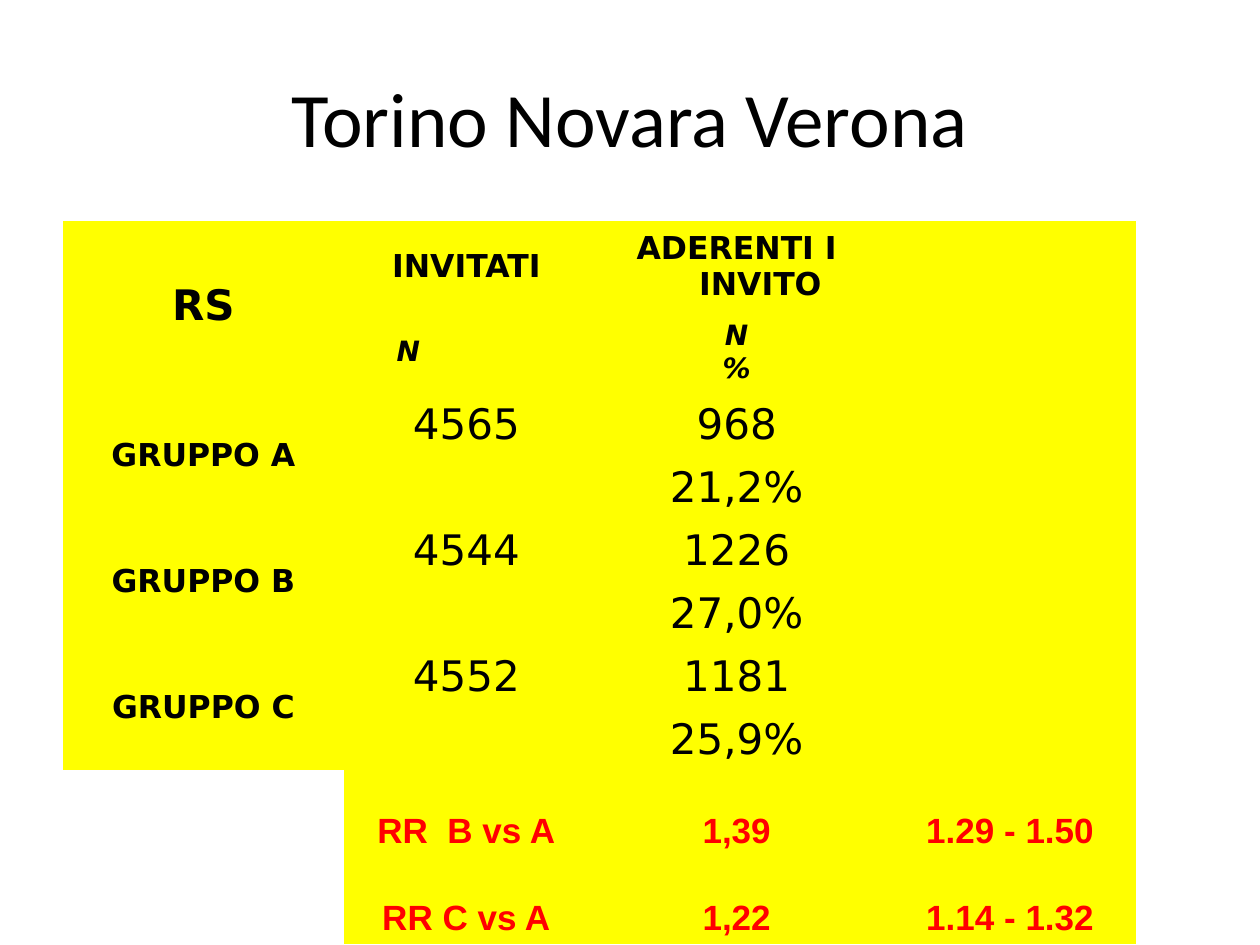
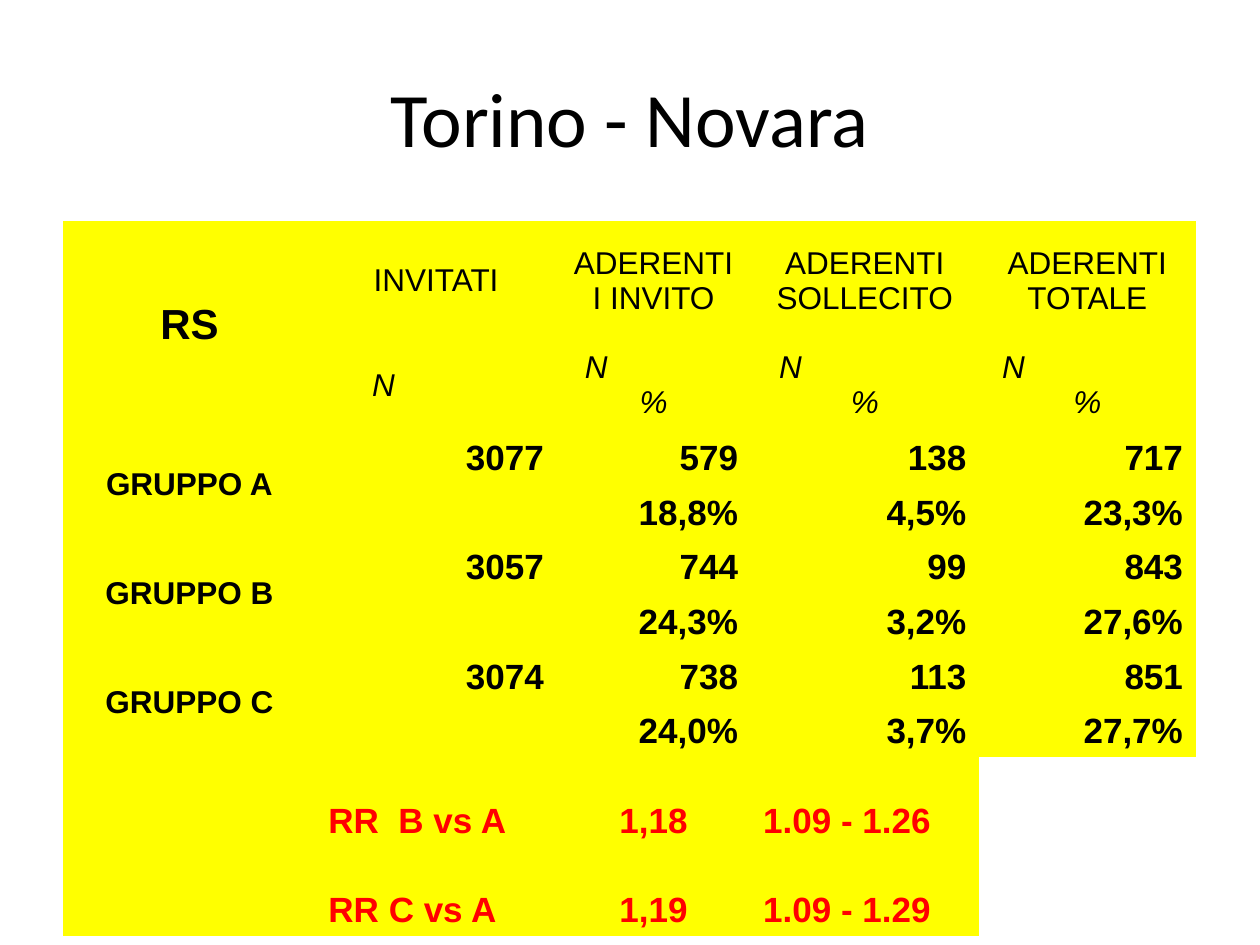
from dataclasses import dataclass, replace

from pptx import Presentation
from pptx.dml.color import RGBColor
from pptx.enum.text import MSO_ANCHOR as Anchor, PP_ALIGN as Align
from pptx.oxml.ns import qn
from pptx.util import Pt

BLACK = RGBColor(0x00, 0x00, 0x00)
RED = RGBColor(0xFF, 0x00, 0x00)
YELLOW = RGBColor(0xFF, 0xFF, 0x00)
PLAIN_TABLE_STYLE = "{2D5ABB26-0587-4C30-8999-92F81FD0307C}"
LEFT, TITLE_TOP, TABLE_TOP = 36, 21.6, 126
TITLE_WIDTH, TITLE_HEIGHT = 648, 90


@dataclass(frozen=True)
class TextStyle:
    font: str
    size: float
    bold: bool = False
    italic: bool = False
    color: RGBColor = BLACK
    align: Align = Align.CENTER
    anchor: Anchor = Anchor.MIDDLE
    hanging: float = 0


TITLE_STYLE = TextStyle("Calibri", 44)
CORNER = "RS"
RATIO_FIRST_COLUMN = 1
RATIO_STYLE = TextStyle("Arial", 20, bold=True, color=RED, anchor=Anchor.BOTTOM)

# "unit_indents": left indent of the N in each column, None where it is centred.
# "groups": label, number invited, then (count, share) for each invitation round.
HANGING = TextStyle("DejaVu Sans", 18, bold=True, hanging=27)
ARIAL = TextStyle("Arial", 18)
STUDIES = [
    {
        "title": "Torino Novara Verona",
        "columns": [160.5, 140, 169, 143.5],
        "rows": [52.5, 33] + [23.75] * 6 + [49.7] * 2,
        "height": 413,
        "headings": ["INVITATI", "ADERENTI I INVITO"],
        "unit_indents": [23, None],
        "groups": [
            ("GRUPPO A", "4565", [("968", "21,2%")]),
            ("GRUPPO B", "4544", [("1226", "27,0%")]),
            ("GRUPPO C", "4552", [("1181", "25,9%")]),
        ],
        "ratios": [("RR  B vs A", "1,39", "1.29 - 1.50"),
                   ("RR C vs A", "1,22", "1.14 - 1.32")],
        "ratio_aligns": [Align.CENTER] * 3,
        "unfilled_column": 0,
        "heading": HANGING,
        "unit": replace(HANGING, size=16, italic=True),
        "label": HANGING,
        "value": replace(HANGING, size=24, bold=False, anchor=Anchor.BOTTOM),
        "ratio": replace(RATIO_STYLE, hanging=27),
    },
    {
        "title": "Torino - Novara",
        "columns": [144.5, 137.5, 111, 130.5, 123.8],
        "rows": [69, 39] + [24.5] * 6 + [51.1] * 2,
        "height": 409,
        "headings": ["INVITATI", "ADERENTI I INVITO", "ADERENTI SOLLECITO",
                     "ADERENTI TOTALE"],
        "unit_indents": [25, 9, 9, 6],
        "groups": [
            ("GRUPPO A", "3077",
             [("579", "18,8%"), ("138", "4,5%"), ("717", "23,3%")]),
            ("GRUPPO B", "3057",
             [("744", "24,3%"), ("99", "3,2%"), ("843", "27,6%")]),
            ("GRUPPO C", "3074",
             [("738", "24,0%"), ("113", "3,7%"), ("851", "27,7%")]),
        ],
        "ratios": [("RR  B vs A", "1,18", "1.09 - 1.26"),
                   ("RR C vs A", "1,19", "1.09 - 1.29")],
        "ratio_aligns": [Align.LEFT, Align.CENTER, Align.LEFT],
        "unfilled_column": 4,
        "heading": ARIAL,
        "unit": replace(ARIAL, italic=True),
        "label": replace(ARIAL, bold=True),
        "value": replace(ARIAL, size=20, bold=True, align=Align.RIGHT,
                         anchor=Anchor.BOTTOM),
        "ratio": RATIO_STYLE,
    },
]


def set_indent(paragraph, left, first_line):
    properties = paragraph._p.get_or_add_pPr()
    properties.set("marL", str(Pt(left)))
    properties.set("indent", str(Pt(first_line)))


def format_paragraph(paragraph, style):
    paragraph.alignment = style.align
    if style.hanging:
        set_indent(paragraph, style.hanging, -style.hanging)
    for run in paragraph.runs:
        run.font.name = style.font
        run.font.size = Pt(style.size)
        run.font.bold = style.bold
        run.font.italic = style.italic
        run.font.color.rgb = style.color


def write_cell(cell, text, style):
    cell.text_frame.text = text
    cell.vertical_anchor = style.anchor
    for paragraph in cell.text_frame.paragraphs:
        format_paragraph(paragraph, style)


def add_title(slide, text):
    box = slide.shapes.add_textbox(Pt(LEFT), Pt(TITLE_TOP),
                                   Pt(TITLE_WIDTH), Pt(TITLE_HEIGHT))
    frame = box.text_frame
    frame.word_wrap = True
    frame.vertical_anchor = TITLE_STYLE.anchor
    frame.text = text
    format_paragraph(frame.paragraphs[0], TITLE_STYLE)


def add_plain_table(slide, study):
    """Add the empty grid, yellow except beside the ratio rows."""
    columns, rows = study["columns"], study["rows"]
    shape = slide.shapes.add_table(len(rows), len(columns), Pt(LEFT), Pt(TABLE_TOP),
                                   Pt(sum(columns)), Pt(study["height"]))
    shape.element.find(".//" + qn("a:tableStyleId")).text = PLAIN_TABLE_STYLE
    table = shape.table
    table.first_row = table.horz_banding = False
    for column, width in zip(table.columns, columns):
        column.width = Pt(width)
    for row, height in zip(table.rows, rows):
        row.height = Pt(height)
    shape.height = Pt(study["height"])

    first_ratio_row = len(rows) - len(study["ratios"])
    for row in range(len(rows)):
        for column in range(len(columns)):
            fill = table.cell(row, column).fill
            if row >= first_ratio_row and column == study["unfilled_column"]:
                fill.background()
            else:
                fill.solid()
                fill.fore_color.rgb = YELLOW
    return table


def write_row_label(table, row, text, style):
    """Write a label that spans two rows of the first column."""
    cell = table.cell(row, 0)
    cell.merge(table.cell(row + 1, 0))
    write_cell(cell, text, style)


def write_headings(table, study):
    write_row_label(table, 0, CORNER, replace(study["label"], size=24))
    for column, heading in enumerate(study["headings"], 1):
        write_cell(table.cell(0, column), heading, study["heading"])
    for column, indent in enumerate(study["unit_indents"], 1):
        cell = table.cell(1, column)
        write_cell(cell, "N" if column == 1 else "N\n%", study["unit"])
        if indent is not None:
            count = cell.text_frame.paragraphs[0]
            count.alignment = Align.LEFT
            set_indent(count, indent, 0)


def write_groups(table, study):
    for index, (label, invited, rounds) in enumerate(study["groups"]):
        row = 2 + 2 * index
        write_row_label(table, row, label, study["label"])
        write_cell(table.cell(row, 1), invited, study["value"])
        for column, results in enumerate(rounds, 2):
            for offset, value in enumerate(results):
                write_cell(table.cell(row + offset, column), value, study["value"])


def write_ratios(table, study):
    first_row = len(study["rows"]) - len(study["ratios"])
    for row, ratio in enumerate(study["ratios"], first_row):
        aligned = zip(ratio, study["ratio_aligns"])
        for column, (text, align) in enumerate(aligned, RATIO_FIRST_COLUMN):
            write_cell(table.cell(row, column), text,
                       replace(study["ratio"], align=align))


def main():
    presentation = Presentation()
    presentation.slide_width, presentation.slide_height = Pt(720), Pt(540)
    for study in STUDIES:
        slide = presentation.slides.add_slide(presentation.slide_layouts[6])
        add_title(slide, study["title"])
        table = add_plain_table(slide, study)
        write_headings(table, study)
        write_groups(table, study)
        write_ratios(table, study)
    presentation.save("out.pptx")


if __name__ == "__main__":
    main()
